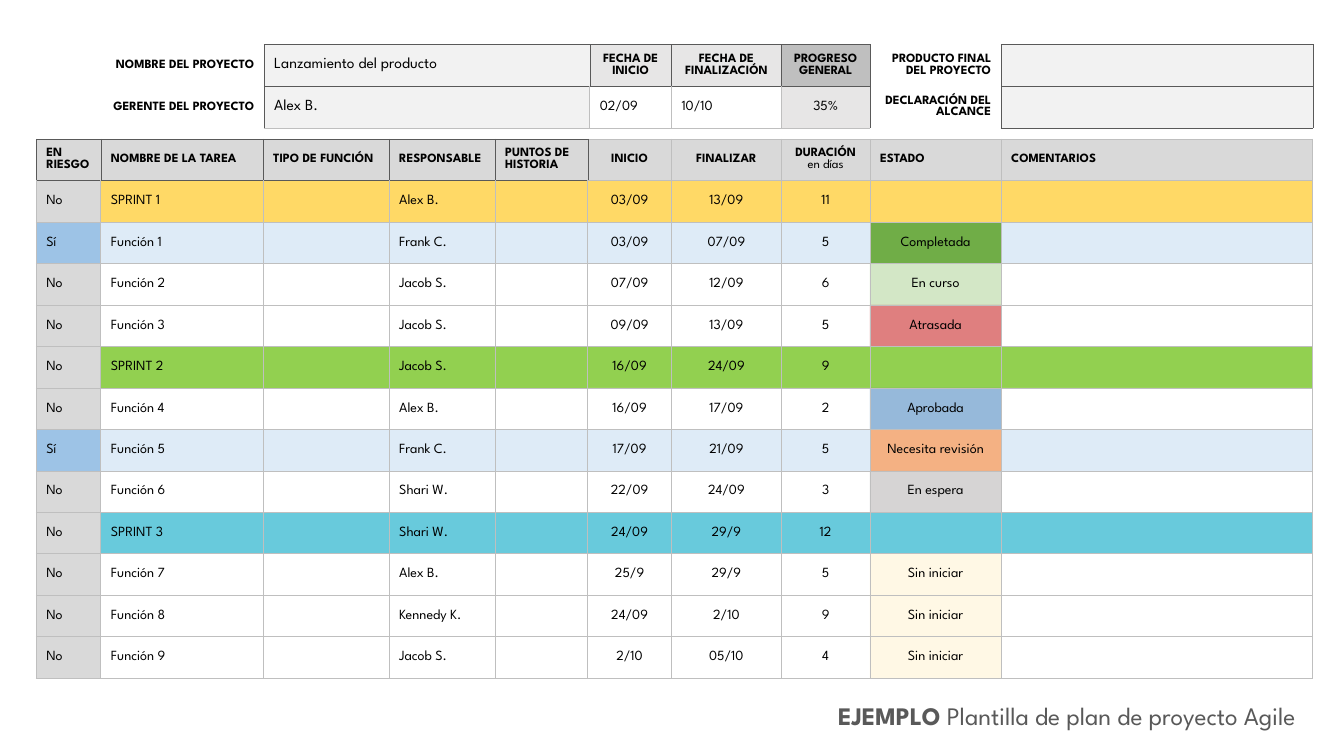
from pptx import Presentation, oxml, util as u
from pptx.dml import color as dml
from pptx.enum import text as t

FONT = "League Spartan"
DARK, LIGHT, NONE = ("595959", 0.25), ("BFBFBF", 0.5), None
SIDES = "LRTB"
WHITE, GREY, PALE, RISK, BLUE = "FFFFFF", "D9D9D9", "F2F2F2", "9DC3E6", "DEEBF7"
ALIGN = {"l": t.PP_ALIGN.LEFT, "c": t.PP_ALIGN.CENTER, "r": t.PP_ALIGN.RIGHT}

TITLE = [("EJEMPLO", True), (" Plantilla de plan de proyecto Agile ", False)]

TASK_COLUMNS = [
    ("EN RIESGO", 0.64), ("NOMBRE DE LA TAREA", 1.61), ("TIPO DE FUNCIÓN", 1.25),
    ("RESPONSABLE", 1.05), ("PUNTOS DE HISTORIA", 0.92), ("INICIO", 0.83),
    ("FINALIZAR", 1.09), ("DURACIÓN ", 0.88), ("ESTADO", 1.3), ("COMENTARIOS", 3.09),
]
DURATION_UNIT = "en días"
TASKS = [
    ("No", "SPRINT 1", "Alex B.", "03/09", "13/09", "11", ""),
    ("Sí", "Función 1", "Frank C.", "03/09", "07/09", "5", "Completada"),
    ("No", "Función 2", "Jacob S.", "07/09", "12/09", "6", "En curso"),
    ("No", "Función 3", "Jacob S.", "09/09", "13/09", "5", "Atrasada"),
    ("No", "SPRINT 2", "Jacob S.", "16/09", "24/09", "9", ""),
    ("No", "Función 4", "Alex B.", "16/09", "17/09", "2", "Aprobada"),
    ("Sí", "Función 5", "Frank C.", "17/09", "21/09", "5", "Necesita revisión"),
    ("No", "Función 6", "Shari W.", "22/09", "24/09", "3", "En espera"),
    ("No", "SPRINT 3", "Shari W.", "24/09", "29/9", "12", ""),
    ("No", "Función 7", "Alex B.", "25/9", "29/9", "5", "Sin iniciar"),
    ("No", "Función 8", "Kennedy K.", "24/09", "2/10", "9", "Sin iniciar"),
    ("No", "Función 9", "Jacob S.", "2/10", "05/10", "4", "Sin iniciar"),
]
SPRINT_FILLS = {"SPRINT 1": "FFD966", "SPRINT 2": "92D050", "SPRINT 3": "68CADC"}
STATUS_FILLS = {
    "Completada": ("70AD47", 100), "En curso": ("A9D18E", 50), "Atrasada": ("C00000", 50),
    "Aprobada": ("2E75B6", 50), "Necesita revisión": ("F4B183", 100),
    "En espera": ("AFABAB", 50), "Sin iniciar": ("FFF2CC", 50),
}

PROJECT_WIDTHS = [1.81, 3.23, 0.81, 1.09, 0.88, 1.3, 3.09]
PROJECT = [
    [("NOMBRE DEL PROYECTO", 9, True, "r", None), ("Lanzamiento del producto", 11, False, "l", PALE),
     ("FECHA DE INICIO", 9, True, "c", "E7E6E6"), ("FECHA DE FINALIZACIÓN", 9, True, "c", "E7E6E6"),
     ("PROGRESO GENERAL", 9, True, "c", "BFBFBF"),
     ("PRODUCTO FINAL DEL PROYECTO", 9, True, "r", None), ("", 9, False, "l", PALE)],
    [("GERENTE DEL PROYECTO", 9, True, "r", None), ("Alex B.", 11, False, "l", PALE),
     ("02/09", 10, False, "l", WHITE), ("10/10", 10, False, "l", WHITE),
     ("35%", 10, False, "c", "E7E6E6"),
     ("DECLARACIÓN DEL ALCANCE", 9, True, "r", None), ("", 9, False, "l", PALE)],
]


def rgb(value):
    return dml.RGBColor.from_string(value)


def add_runs(paragraph, runs, size, ink):
    for words, bold in runs:
        run = paragraph.add_run()
        run.text = words
        for name, value in {"name": FONT, "size": u.Pt(size), "bold": bold}.items():
            setattr(run.font, name, value)
        run.font.color.rgb = rgb(ink)


def paint(cell, fill, alpha=100):
    if fill is None:
        cell.fill.background()
        return
    cell.fill.solid()
    cell.fill.fore_color.rgb = rgb(fill)
    if alpha < 100:
        tint = cell._tc.get_or_add_tcPr().find(".//" + oxml.ns.qn("a:srgbClr"))
        tint.append(oxml.parse_xml(f'<a:alpha {oxml.ns.nsdecls("a")} val="{alpha * 1000}"/>'))


def outline(cell, edges):
    for position, side in enumerate(SIDES):
        hue, width = edges[side] or (WHITE, 0)
        ink = f'<a:solidFill><a:srgbClr val="{hue}"/></a:solidFill>' if edges[side] else "<a:noFill/>"
        cell._tc.get_or_add_tcPr().insert(position, oxml.parse_xml(
            f'<a:ln{side} {oxml.ns.nsdecls("a")} w="{u.Pt(width)}">{ink}</a:ln{side}>'))


def write(cell, runs, size, align, margins):
    cell.vertical_anchor = t.MSO_ANCHOR.MIDDLE
    for side, value in zip(("left", "top", "right", "bottom"), margins):
        setattr(cell, "margin_" + side, u.Inches(value))
    paragraph = cell.text_frame.paragraphs[0]
    paragraph.alignment = ALIGN[align]
    if runs[0][0]:
        add_runs(paragraph, runs, size, "000000")
    else:
        paragraph.font.size = u.Pt(size)


def add_grid(slide, left, top, widths, height, rows):
    grid = slide.shapes.add_table(rows, len(widths), u.Inches(left), u.Inches(top),
                                  u.Inches(sum(widths)), u.Inches(height)).table
    grid.first_row = grid.horz_banding = False
    for column, width in zip(grid.columns, widths):
        column.width = u.Inches(width)
    for row in grid.rows:
        row.height = u.Inches(height / rows)
    return grid


def add_tasks(slide):
    grid = add_grid(slide, 0.36, 1.38, [width for _, width in TASK_COLUMNS], 5.35, len(TASKS) + 1)
    for c, (heading, _) in enumerate(TASK_COLUMNS):
        cell = grid.cell(0, c)
        runs = [(heading, True)] + ([(DURATION_UNIT, False)] if c == 7 else [])
        write(cell, runs, 9, "c" if c in (5, 6, 7) else "l", (0.1, 0.05, 0.1 if c else 0, 0.05))
        paint(cell, GREY)
        edges = dict.fromkeys(SIDES, DARK if c < 5 else LIGHT)
        outline(cell, edges | ({"L": DARK} if c == 5 else {}))
    for r, (risk, task, owner, start, end, days, status) in enumerate(TASKS, 1):
        row_fill = SPRINT_FILLS.get(task, BLUE if risk == "Sí" else WHITE)
        for c, words in enumerate((risk, task, "", owner, "", start, end, days, status, "")):
            cell = grid.cell(r, c)
            centred = 5 <= c <= 8
            margins = (0,) * 4 if centred else (0.1, 0.05, 0.1 if c else 0, 0.05)
            write(cell, [(words, False)], 10, "c" if centred else "l", margins)
            if c == 0:
                paint(cell, RISK if risk == "Sí" else GREY)
            elif c == 8 and status:
                paint(cell, *STATUS_FILLS[status])
            else:
                paint(cell, row_fill, 50 if c > 4 and row_fill == WHITE else 100)
            edges = dict.fromkeys(SIDES, LIGHT)
            outline(cell, edges | ({"T": DARK} if r == 1 and c < 5 else {}))


def add_project(slide):
    grid = add_grid(slide, 0.81, 0.44, PROJECT_WIDTHS, 0.83, len(PROJECT))
    for r, fields in enumerate(PROJECT):
        for c, (words, size, bold, align, fill) in enumerate(fields):
            cell = grid.cell(r, c)
            write(cell, [(words, bold)], size, align, (0.1, 0.05, 0.1, 0.05))
            paint(cell, fill)
            edges = dict.fromkeys(SIDES, DARK)
            if fill is None:
                edges |= {"T": NONE, "B": NONE, "L": DARK if c else NONE}
            elif r == 1 and c < 5:
                edges |= {"L": DARK if c == 1 else LIGHT, "R": DARK if c == 4 else LIGHT, "B": LIGHT}
            outline(cell, edges)


def add_title(slide):
    frame = slide.shapes.add_textbox(*map(u.Inches, (5.82, 6.9, 7.19, 0.4))).text_frame
    for name, value in {"word_wrap": True, "auto_size": t.MSO_AUTO_SIZE.SHAPE_TO_FIT_TEXT}.items():
        setattr(frame, name, value)
    frame.paragraphs[0].alignment = ALIGN["r"]
    add_runs(frame.paragraphs[0], TITLE, 18, "595959")


def main():
    deck = Presentation()
    deck.slide_width, deck.slide_height = u.Inches(13.33), u.Inches(7.5)
    slide = deck.slides.add_slide(deck.slide_layouts[6])
    add_title(slide)
    add_tasks(slide)
    add_project(slide)
    deck.save("out.pptx")


if __name__ == "__main__":
    main()
